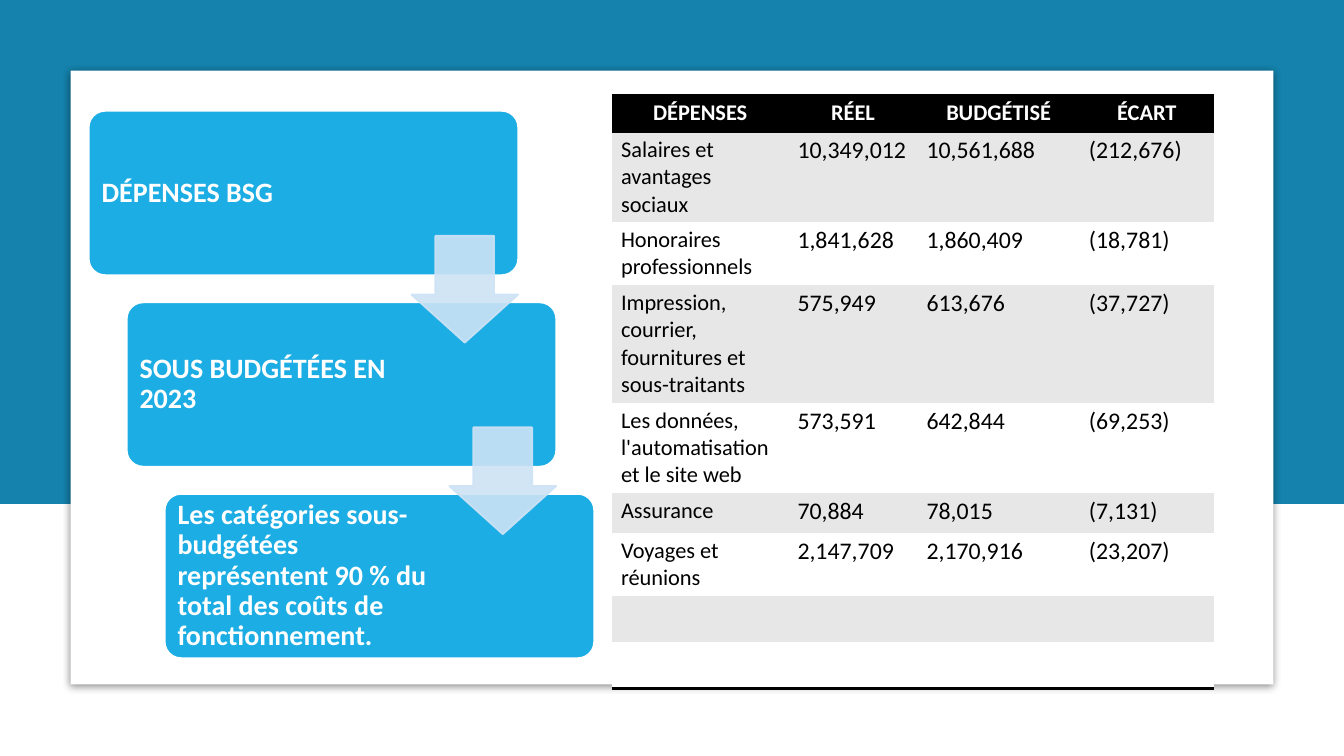
from lxml.etree import SubElement as Sub
from pptx import Presentation
from pptx.dml.color import RGBColor as RGB
from pptx.enum.shapes import MSO_SHAPE as Kind
from pptx.enum.text import MSO_ANCHOR as Anchor, PP_ALIGN as Align
from pptx.oxml.ns import qn
from pptx.util import Inches as Inch, Pt

WIDE, HIGH = 13.33, 7.5
FONT = "Calibri"
HUES = {
    "band": "1482AC", "step": "1CADE4", "arrow": "CDE3F5",
    "white": "FFFFFF", "black": "000000", "stripe": "E7E7E7",
}
PLAIN = "{2D5ABB26-0587-4C30-8999-92F81FD0307C}"
STEPS = [
    "DÉPENSES BSG",
    "SOUS BUDGÉTÉES EN 2023",
    "Les catégories sous-budgétées représentent 90 % du total des coûts de fonctionnement.",
]
SHIFT, DROP = 0.377, 1.9
COLS = [1.75, 1.28, 1.61, 1.33]
ROWS = [0.37, 0.87, 0.61, 1.13, 0.87, 0.4, 0.61, 0.46, 0.46]
COSTS = [
    ("DÉPENSES", "RÉEL", "BUDGÉTISÉ", "ÉCART"),
    ("Salaires et avantages sociaux", "10,349,012", "10,561,688", "(212,676)"),
    ("Honoraires professionnels", "1,841,628", "1,860,409", "(18,781)"),
    ("Impression, courrier, fournitures et sous-traitants",
     "575,949", "613,676", "(37,727)"),
    ("Les données, l'automatisation et le site web",
     "573,591", "642,844", "(69,253)"),
    ("Assurance", "70,884", "78,015", "(7,131)"),
    ("Voyages et réunions", "2,147,709", "2,170,916", "(23,207)"),
    ("",) * 4,
    ("",) * 4,
]


def hue(name):
    """Return a palette colour."""
    return RGB.from_string(HUES[name])


def style(para, size, name, bold):
    """Set the font of a paragraph."""
    font = para.font
    font.name, font.size, font.bold = FONT, Pt(size), bold
    font.color.rgb = hue(name)


def block(slide, kind, area, fill, line=None, adjust=()):
    """Add a filled preset shape without a shadow."""
    shape = slide.shapes.add_shape(kind, *map(Inch, area))
    shape.shadow.inherit = False
    shape.fill.solid()
    shape.fill.fore_color.rgb = hue(fill)
    if line:
        shape.line.color.rgb = hue(line)
        shape.line.width = Pt(1.25)
    else:
        shape.line.fill.background()
    for spot, share in enumerate(adjust):
        shape.adjustments[spot] = share
    return shape


def shade(shape):
    """Give a shape a soft shadow below it."""
    effect = shape._element.spPr.find(qn("a:effectLst"))
    outer = Sub(effect, qn("a:outerShdw"), blurRad=str(Pt(5)),
                dist=str(Pt(1.4)), dir="5400000", algn="t", rotWithShape="0")
    tint = Sub(outer, qn("a:srgbClr"), val=HUES["black"])
    Sub(tint, qn("a:alpha"), val="43000")


def step(slide, rank, words):
    """Add one stair of the cascade with its text."""
    area = (0.88 + rank * SHIFT, 1.1 + rank * DROP, 4.26, 1.63)
    frame = block(slide, Kind.ROUNDED_RECTANGLE, area, "step", "white", [0.1]).text_frame
    frame.word_wrap = True
    frame.vertical_anchor = Anchor.MIDDLE
    frame.margin_left = frame.margin_top = frame.margin_bottom = Inch(0.08)
    frame.margin_right = Inch(1.51)
    para = frame.paragraphs[0]
    para.text = words
    para.alignment = Align.LEFT
    para.line_spacing = 0.9
    style(para, 20, "white", True)


def arrow(slide, rank):
    """Add a translucent arrow from one stair to the next."""
    area = (4.08 + rank * SHIFT, 2.34 + rank * DROP, 1.06, 1.06)
    shape = block(slide, Kind.DOWN_ARROW, area, "arrow", "arrow", [0.55, 0.45])
    for tint in shape._element.spPr.iter(qn("a:srgbClr")):
        Sub(tint, qn("a:alpha"), val="90000")


def border(cell, side):
    """Draw a black rule on one side of a cell."""
    line = Sub(cell._tc.get_or_add_tcPr(), qn("a:" + side), w=str(Pt(2)))
    Sub(Sub(line, qn("a:solidFill")), qn("a:srgbClr"), val=HUES["black"])


def entry(cell, row, col, words):
    """Fill and format one table cell."""
    head = row == 0
    cell.margin_left = cell.margin_right = Inch(0.09)
    cell.margin_top = cell.margin_bottom = Inch(0.04)
    if head:
        border(cell, "lnT")
    if head or row == len(ROWS) - 1:
        border(cell, "lnB")
    cell.fill.solid()
    cell.fill.fore_color.rgb = hue("black" if head else "stripe" if row % 2 else "white")
    para = cell.text_frame.paragraphs[0]
    para.text = words
    para.alignment = Align.CENTER if head else Align.LEFT
    style(para, 17 if col and not head else 16, "white" if head else "black", head)


def costs(slide):
    """Add the table of expenses."""
    area = (6.07, 0.94, sum(COLS), sum(ROWS))
    table = slide.shapes.add_table(len(ROWS), len(COLS), *map(Inch, area)).table
    table._tbl.tblPr.find(qn("a:tableStyleId")).text = PLAIN
    table.horz_banding = False
    for col, width in zip(table.columns, COLS):
        col.width = Inch(width)
    for row, height in zip(table.rows, ROWS):
        row.height = Inch(height)
    for row, line in enumerate(COSTS):
        for col, words in enumerate(line):
            entry(table.cell(row, col), row, col, words)


def main():
    """Build and save the slide."""
    deck = Presentation()
    deck.slide_width, deck.slide_height = Inch(WIDE), Inch(HIGH)
    slide = deck.slides.add_slide(deck.slide_layouts[6])
    block(slide, Kind.RECTANGLE, (0, 0, WIDE, HIGH * 2 / 3), "band")
    shade(block(slide, Kind.RECTANGLE, (0.7, 0.7, WIDE - 1.4, 6.09), "white"))
    costs(slide)
    for rank, words in enumerate(STEPS):
        step(slide, rank, words)
    for rank in range(len(STEPS) - 1):
        arrow(slide, rank)
    deck.save("out.pptx")


if __name__ == "__main__":
    main()
